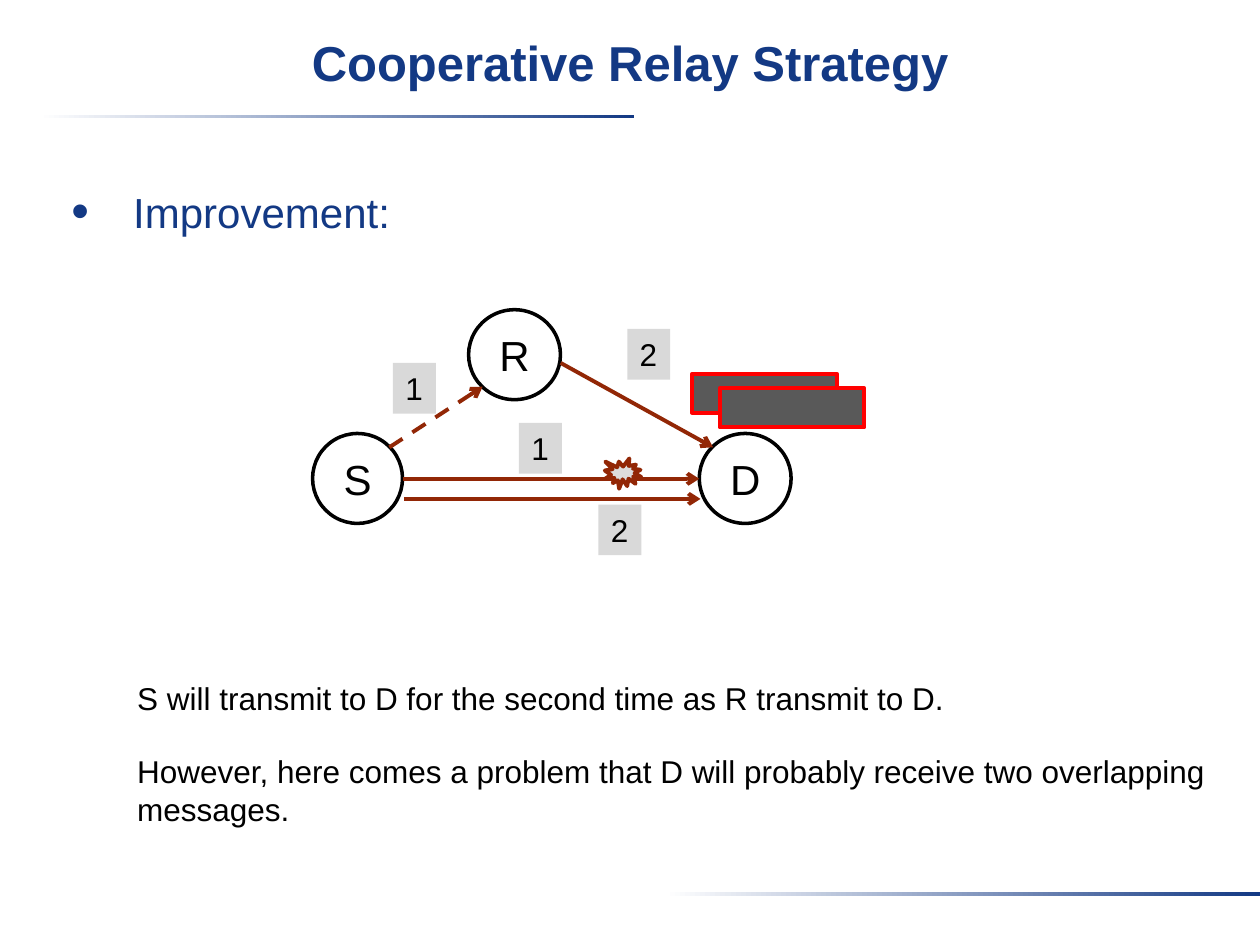
from lxml import etree
from pptx import Presentation
from pptx.dml.color import RGBColor
from pptx.enum import dml, shapes, text
from pptx.oxml import ns
from pptx.util import Pt

NAVY, RUST, BLACK, WHITE = "133984", "922706", "000000", "FFFFFF"


def rgb(value):
    return RGBColor.from_string(value)


def sub(parent, tag, **attrs):
    return etree.SubElement(parent, ns.qn(tag), attrs)


class Deck:
    font = "Arial"

    def __init__(self, width, height):
        self.prs = Presentation()
        self.prs.slide_width, self.prs.slide_height = Pt(width), Pt(height)
        self.s = self.prs.slides.add_slide(self.prs.slide_layouts[5])

    def style(self, p, size, color, bold=False):
        f = p.font
        f.name, f.size, f.bold = self.font, Pt(size), bold
        f.color.rgb = rgb(color)

    def title(self, words, x, y, w, h):
        sp = self.s.shapes.title
        sp.left, sp.top, sp.width, sp.height = Pt(x), Pt(y), Pt(w), Pt(h)
        tf = sp.text_frame
        tf.text = words
        tf.vertical_anchor = text.MSO_ANCHOR.TOP
        tf.auto_size = text.MSO_AUTO_SIZE.NONE
        tf.margin_top = Pt(4.3)
        p = tf.paragraphs[0]
        p.alignment = text.PP_ALIGN.CENTER
        self.style(p, 28, NAVY, True)

    def shape(self, kind, x, y, w, h, fill, line=None, weight=2.25):
        sp = self.s.shapes.add_shape(kind, Pt(x), Pt(y), Pt(w), Pt(h))
        sp.shadow.inherit = False
        sp.fill.solid()
        sp.fill.fore_color.rgb = rgb(fill)
        if line:
            sp.line.color.rgb = rgb(line)
            sp.line.width = Pt(weight)
        else:
            sp.line.fill.background()
        return sp

    def rule(self, x, y):
        sp = self.shape(shapes.MSO_SHAPE.RECTANGLE, x, y, 340, 2.2, WHITE)
        sp.fill.gradient()
        sp.fill.gradient_angle = 0
        for stop, color, pos in zip(sp.fill.gradient_stops, (WHITE, NAVY), (0, 1)):
            stop.color.rgb = rgb(color)
            stop.position = pos

    def node(self, name, x, y, w):
        sp = self.shape(shapes.MSO_SHAPE.OVAL, x, y, w, 51.4, WHITE, BLACK, 2)
        tf = sp.text_frame
        tf.text = name
        tf.vertical_anchor = text.MSO_ANCHOR.MIDDLE
        p = tf.paragraphs[0]
        p.alignment = text.PP_ALIGN.CENTER
        self.style(p, 24, BLACK)

    def arrow(self, x1, y1, x2, y2, dashed=False):
        c = self.s.shapes.add_connector(
            shapes.MSO_CONNECTOR.STRAIGHT, Pt(x1), Pt(y1), Pt(x2), Pt(y2))
        c.line.color.rgb = rgb(RUST)
        c.line.width = Pt(2.25)
        if dashed:
            c.line.dash_style = dml.MSO_LINE.DASH
        sub(c.line._get_or_add_ln(), "a:tailEnd", type="arrow")
        sub(c._element.spPr, "a:effectLst")

    def note(self, lines, x, y, w, h, fill=None):
        sp = self.s.shapes.add_textbox(Pt(x), Pt(y), Pt(w), Pt(h))
        if fill:
            sp.fill.solid()
            sp.fill.fore_color.rgb = rgb(fill)
        tf = sp.text_frame
        tf.word_wrap = False
        tf.auto_size = text.MSO_AUTO_SIZE.SHAPE_TO_FIT_TEXT
        for i, line in enumerate(lines):
            p = tf.add_paragraph() if i else tf.paragraphs[0]
            p.text = line
            self.style(p, 18, BLACK)

    def bullet(self, words, x, y, w, h):
        tf = self.s.shapes.add_textbox(Pt(x), Pt(y), Pt(w), Pt(h)).text_frame
        tf.word_wrap = True
        p = tf.paragraphs[0]
        p.text = words
        p.line_spacing = 1.1
        pPr = p._p.get_or_add_pPr()
        indent = Pt(35.3)
        pPr.set("marL", str(indent))
        pPr.set("indent", str(-indent))
        sub(pPr, "a:buSzPct", val="120000")
        sub(pPr, "a:buFont", typeface=self.font)
        sub(pPr, "a:buChar", char="•")
        self.style(p, 24, NAVY)


def main():
    d = Deck(720, 540)
    for x, y in ((22.3, 65.5), (380, 509.8)):
        d.rule(x, y)
    d.title("Cooperative Relay Strategy", 0, 14.4, 720, 54)
    d.bullet("Improvement:", 33.8, 100, 648, 399)

    for name, x, y, w in (("S", 178.6, 247.7, 51.4), ("R", 267.8, 177, 52.5),
                          ("D", 399.6, 247.7, 52.5)):
        d.node(name, x, y, w)

    d.arrow(222.5, 255.6, 275.8, 221, dashed=True)
    d.arrow(230.4, 273.6, 399.6, 273.6)
    d.arrow(320.4, 207.4, 407.5, 255.6)
    d.arrow(231, 285.1, 400.3, 285.1)

    for step, x, y in (("1", 224.6, 207.4), ("2", 358.5, 188),
                       ("2", 342, 288.3), ("1", 296.6, 241.7)):
        d.note([step], x, y, 24.5, 29, "D9D9D9")

    d.shape(shapes.MSO_SHAPE.EXPLOSION1, 345.6, 262, 20.9, 17.3, "DDDDDD", RUST)
    for x, y in ((395.5, 213.6), (411.2, 221.9)):
        d.shape(shapes.MSO_SHAPE.RECTANGLE, x, y, 82.8, 22.3, "595959", "FF0000")

    d.note(["S will transmit to D for the second time as R transmit to D."],
           71.3, 384.5, 480, 29)
    d.note(["However, here comes a problem that D will probably receive two overlapping",
            "messages."], 71.3, 426.2, 631, 51)
    d.prs.save("out.pptx")


if __name__ == "__main__":
    main()
